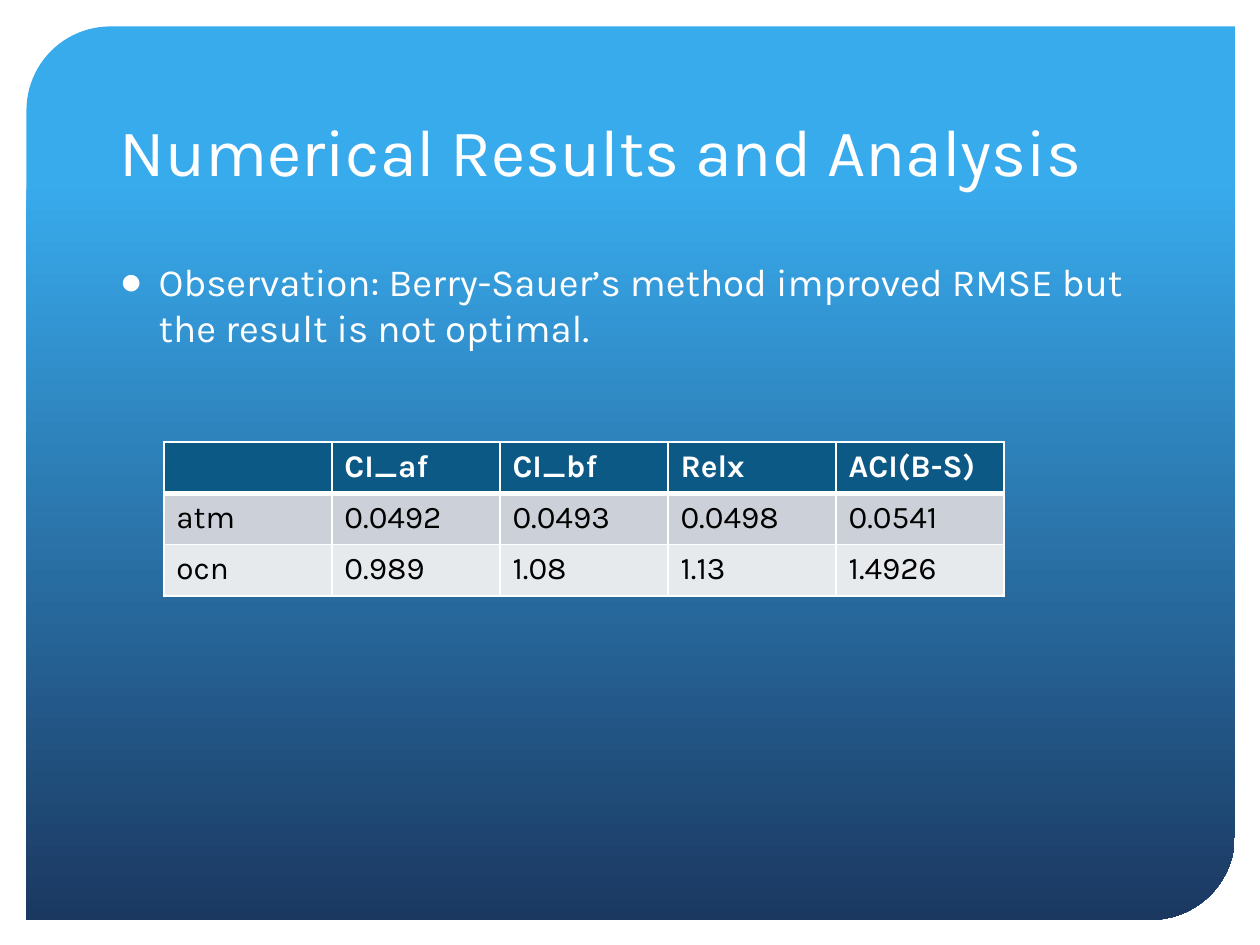
import pptx
import pptx.util
import pptx.dml.color
import pptx.enum.shapes
import pptx.enum.text
import pptx.oxml
import pptx.oxml.ns

Inches = pptx.util.Inches
Pt = pptx.util.Pt
FONT = "Karla"
COLORS = {
    "white": "FFFFFF",
    "black": "000000",
    "sky": "38ABED",
    "navy": "1B3861",
    "head": "0C5986",
    "odd": "CCD1D9",
    "even": "E7EAED",
}
ROWS = [
    ["", "CI_af", "CI_bf", "Relx", "ACI(B-S)"],
    ["atm", "0.0492", "0.0493", "0.0498", "0.0541"],
    ["ocn", "0.989", "1.08", "1.13", "1.4926"],
]


def rgb(name):
    """Return the named colour."""
    return pptx.dml.color.RGBColor.from_string(COLORS[name])


def style(para, size, color, bold=False):
    """Format every run of a paragraph."""
    for run in para.runs:
        run.font.name = FONT
        run.font.size = Pt(size)
        run.font.bold = bold
        run.font.color.rgb = rgb(color)


def place(shape, box):
    """Move a shape to a box of left, top, width and height in inches."""
    shape.left, shape.top, shape.width, shape.height = map(Inches, box)


def add_panel(slide, box):
    """Draw the gradient panel behind all other parts."""
    kind = pptx.enum.shapes.MSO_SHAPE.ROUND_2_DIAG_RECTANGLE
    panel = slide.shapes.add_shape(kind, *map(Inches, box))
    panel.shadow.inherit = False
    panel.adjustments[0] = 0.094
    panel.adjustments[1] = 0
    panel.line.fill.background()
    panel.fill.gradient()
    panel.fill.gradient_angle = 270
    stops = zip(panel.fill.gradient_stops, [(0.17, "sky"), (1, "navy")])
    for stop, (pos, color) in stops:
        stop.position = pos
        stop.color.rgb = rgb(color)
    slide.shapes._spTree.insert(2, panel._element)


def add_title(slide, box, text):
    """Fill the title placeholder."""
    title = slide.shapes.title
    place(title, box)
    frame = title.text_frame
    frame.text = text
    frame.auto_size = pptx.enum.text.MSO_AUTO_SIZE.NONE
    frame.vertical_anchor = pptx.enum.text.MSO_ANCHOR.BOTTOM
    para = frame.paragraphs[0]
    para.alignment = pptx.enum.text.PP_ALIGN.LEFT
    style(para, 38, "white")


def add_body(slide, box, text):
    """Fill the body placeholder with one bulleted paragraph."""
    body = slide.placeholders[1]
    place(body, box)
    frame = body.text_frame
    frame.text = text
    frame.auto_size = pptx.enum.text.MSO_AUTO_SIZE.NONE
    para = frame.paragraphs[0]
    para.space_before = Pt(0)
    props = para._p.get_or_add_pPr()
    props.set("marL", str(Inches(0.31)))
    props.set("indent", str(-Inches(0.31)))
    mark = pptx.oxml.ns.nsdecls("a")
    props.append(pptx.oxml.parse_xml(f'<a:buChar {mark} char="●"/>'))
    style(para, 22, "white")


def add_edge(cell, side, width):
    """Give one side of a cell a white border."""
    mark = pptx.oxml.ns.nsdecls("a")
    cell._tc.get_or_add_tcPr().append(pptx.oxml.parse_xml(
        f'<a:ln{side} {mark} w="{Pt(width)}"><a:solidFill>'
        f'<a:srgbClr val="{COLORS["white"]}"/></a:solidFill></a:ln{side}>'))


def add_grid(slide, box, rows):
    """Add the results table with its header row."""
    grid = slide.shapes.add_table(
        len(rows), len(rows[0]), *map(Inches, box)).table
    fills = ["head", "odd", "even"]
    for i, row in enumerate(rows):
        for j, text in enumerate(row):
            cell = grid.cell(i, j)
            widths = {"L": 1, "R": 1, "T": 3 if i == 1 else 1,
                      "B": 3 if i == 0 else 1}
            for side, width in widths.items():
                add_edge(cell, side, width)
            cell.fill.solid()
            cell.fill.fore_color.rgb = rgb(fills[i])
            cell.text_frame.text = text
            color = "black" if i else "white"
            style(cell.text_frame.paragraphs[0], 18, color, i == 0)


def main():
    """Build and save the slide."""
    deck = pptx.Presentation()
    deck.slide_width, deck.slide_height = Inches(10), Inches(7.5)
    slide = deck.slides.add_slide(deck.slide_layouts[1])
    add_panel(slide, (0.21, 0.21, 9.59, 7.09))
    add_title(slide, (0.85, 0.42, 8.29, 1.14),
              "Numerical Results and Analysis")
    add_body(slide, (0.85, 2, 8.29, 4.6),
             "Observation: Berry-Sauer’s method improved RMSE "
             "but the result is not optimal.")
    add_grid(slide, (1.3, 3.51, 6.67, 1.22), ROWS)
    deck.save("out.pptx")


if __name__ == "__main__":
    main()
